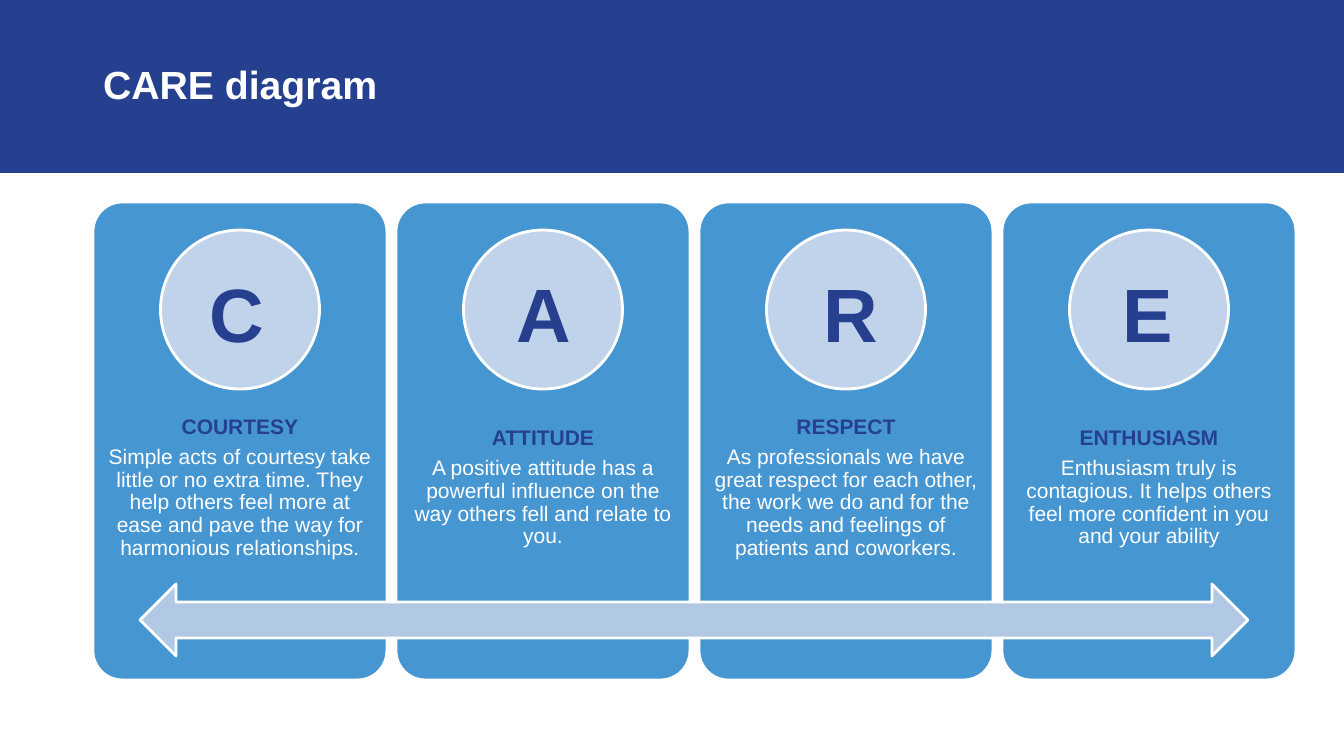
"""Build the CARE diagram slide: four lettered cards joined by a double arrow."""
from pptx import Presentation, util as u
from pptx.dml.color import RGBColor
from pptx.enum import shapes, text

PX = 12192000 / 1344
NAVY, WHITE = "26408F", "FFFFFF"
CARD_LEFT, CARD_WIDTH, CARD_PITCH = 93, 294, 303
CIRCLE = 159

CARDS = [
    ("C", 178, "COURTESY", "Simple acts of courtesy take little or no extra time. They help others "
     "feel more at ease and pave the way for harmonious relationships."),
    ("A", 485, "ATTITUDE", "A positive attitude has a powerful influence on the way others fell "
     "and relate to you."),
    ("R", 792, "RESPECT", "As professionals we have great respect for each other, the work we do "
     "and for the needs and feelings of patients and coworkers."),
    ("E", 1089, "ENTHUSIASM", "Enthusiasm truly is contagious. It helps others feel more confident "
     "in you and your ability"),
]


def paint(color_format, hex_color):
    color_format.rgb = RGBColor.from_string(hex_color)


def add_figure(kind, left, top, width, height, fill, outlined=True):
    figure = slide.shapes.add_shape(kind, *(round(n * PX) for n in (left, top, width, height)))
    figure.shadow.inherit = False
    figure.fill.solid()
    paint(figure.fill.fore_color, fill)
    if outlined:
        paint(figure.line.color, WHITE)
        figure.line.width = u.Pt(2)
    else:
        figure.line.fill.background()
    return figure


prs = Presentation()
prs.slide_width, prs.slide_height = round(1344 * PX), round(756 * PX)
slide = prs.slides.add_slide(prs.slide_layouts[5])

title = slide.shapes.title
band = add_figure(shapes.MSO_SHAPE.RECTANGLE, 0, 0, 1344, 173, "25408F", outlined=False)
title.element.addprevious(band.element)
title.left, title.top, title.width, title.height = (round(n * PX) for n in (93, 14, 1159, 146))
title.text_frame.text = "CARE diagram"
title.text_frame.vertical_anchor = text.MSO_ANCHOR.MIDDLE
heading = title.text_frame.paragraphs[0]
heading.alignment = text.PP_ALIGN.LEFT
heading.line_spacing = 0.9
heading_font = heading.runs[0].font
heading_font.name, heading_font.size, heading_font.bold = "Arial", u.Pt(28), True
paint(heading_font.color, WHITE)

for i, (letter, letter_left, value, meaning) in enumerate(CARDS):
    left = CARD_LEFT + i * CARD_PITCH
    card = add_figure(shapes.MSO_SHAPE.ROUNDED_RECTANGLE, left, 202, CARD_WIDTH, 478, "4696D2")
    card.adjustments[0] = 0.1
    add_figure(shapes.MSO_SHAPE.OVAL, left + (CARD_WIDTH - CIRCLE) / 2, 230, CIRCLE, CIRCLE, "C1D3EA")

    body = slide.shapes.add_textbox(
        *(round(n * PX) for n in (left, 392, CARD_WIDTH, 192))).text_frame
    body.margin_left = body.margin_right = body.margin_top = body.margin_bottom = round(12 * PX)
    body.vertical_anchor = text.MSO_ANCHOR.MIDDLE
    body.text = f"{value}\n{meaning}"

    initial = slide.shapes.add_textbox(
        *(round(n * PX) for n in (letter_left, 262, 118, 102))).text_frame
    initial.text = letter
    body.word_wrap = initial.word_wrap = True

    value_line, meaning_line = body.paragraphs
    for line in (value_line, meaning_line):
        line.line_spacing = 0.9
        line.space_after = u.Pt(5.25)
    for line, size, color, bold in (
        (value_line, 15, NAVY, True),
        (meaning_line, 15, WHITE, False),
        (initial.paragraphs[0], 54, NAVY, True),
    ):
        line.alignment = text.PP_ALIGN.CENTER
        font = line.runs[0].font
        font.name, font.size, font.bold = "Arial", u.Pt(size), bold
        paint(font.color, color)

add_figure(shapes.MSO_SHAPE.LEFT_RIGHT_ARROW, 140, 584, 1108, 72, "B1C9E5")

prs.save("out.pptx")
